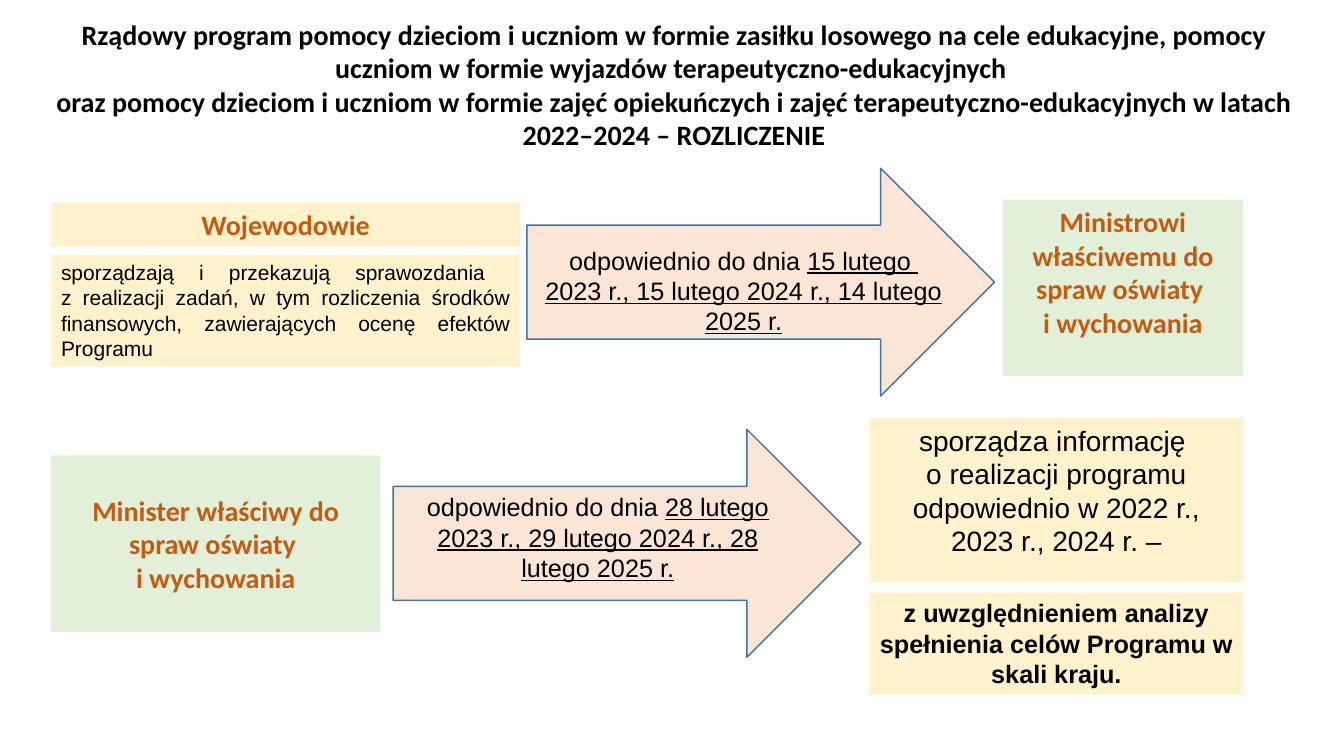
from dataclasses import dataclass

from pptx import Presentation
from pptx.dml.color import RGBColor
from pptx.enum.shapes import MSO_SHAPE as Shape
from pptx.enum.text import MSO_ANCHOR as Anchor, PP_ALIGN as Align
from pptx.util import Inches, Pt

WIDTH, HEIGHT = Inches(13.33), Inches(7.5)
COLUMNS = ROWS = 100
LEFT, RIGHT = 3.8, 64.7
PANEL, RESULT = 34.9, 27.8


@dataclass(frozen=True)
class Theme:
    heading: str = "Calibri"
    body: str = "Arial"
    black: str = "000000"
    orange: str = "C55A11"
    cream: str = "FFF2CC"
    green: str = "E2F0D9"
    peach: str = "FBE5D6"
    outline: str = "43739E"
    large: int = 20
    medium: int = 18
    small: int = 15


@dataclass(frozen=True)
class Style:
    font: str
    size: int
    color: str
    bold: bool = False
    underline: bool = False


THEME = Theme()
TITLE = Style(THEME.heading, THEME.large, THEME.black, bold=True)
ACTOR = Style(THEME.heading, THEME.large, THEME.orange, bold=True)
RESULT_TEXT = Style(THEME.body, THEME.large, THEME.black)
DUTY = Style(THEME.body, THEME.small, THEME.black)
DATE = Style(THEME.body, THEME.medium, THEME.black)
DEADLINE = Style(THEME.body, THEME.medium, THEME.black, underline=True)
EMPHASIS = Style(THEME.body, THEME.medium, THEME.black, bold=True)


def place(column, row, columns, rows):
    return (int(WIDTH * column / COLUMNS), int(HEIGHT * row / ROWS),
            int(WIDTH * columns / COLUMNS), int(HEIGHT * rows / ROWS))


def add_span(para, text, style):
    for index, line in enumerate(text.split("\n")):
        if index:
            para.add_line_break()
        span = para.add_run()
        span.text = line
        font = span.font
        font.name, font.size = style.font, Pt(style.size)
        font.bold, font.underline = style.bold, style.underline
        font.color.rgb = RGBColor.from_string(style.color)


def write(box, paragraphs, align=Align.CENTER, anchor=Anchor.TOP):
    frame = box.text_frame
    frame.word_wrap = True
    frame.vertical_anchor = anchor
    for index, spans in enumerate(paragraphs):
        para = frame.add_paragraph() if index else frame.paragraphs[0]
        para.alignment = align
        for text, style in spans:
            add_span(para, text, style)


def add_text(page, area, paragraphs, **layout):
    write(page.shapes.add_textbox(*place(*area)), paragraphs, **layout)


def add_filled(page, kind, area, fill):
    box = page.shapes.add_shape(kind, *place(*area))
    box.shadow.inherit = False
    box.fill.solid()
    box.fill.fore_color.rgb = RGBColor.from_string(fill)
    box.line.fill.background()
    return box


def add_panel(page, area, fill, text, style, **layout):
    box = add_filled(page, Shape.RECTANGLE, area, fill)
    write(box, [[(text, style)]], **layout)


def add_arrow(page, column, row):
    arrow = add_filled(page, Shape.RIGHT_ARROW, (column, row, 34.8, 30.15), THEME.peach)
    arrow.line.color.rgb = RGBColor.from_string(THEME.outline)
    arrow.line.width = Pt(1)


def add_reporting(page):
    add_panel(page, (LEFT, 26.8, PANEL, 5.85), THEME.cream, "Wojewodowie", ACTOR)
    add_panel(page, (LEFT, 33.7, PANEL, 14.8), THEME.cream,
              "sporządzają i przekazują sprawozdania \nz realizacji zadań, w tym "
              "rozliczenia środków finansowych, zawierających ocenę efektów Programu",
              DUTY, align=Align.JUSTIFY)
    add_arrow(page, 39.2, 22.25)
    add_text(page, (39.2, 27.2, 32.25, 22.4), [
        [("odpowiednio do dnia ", DATE), ("15 lutego ", DEADLINE)],
        [("2023 r., 15 lutego 2024 r., 14 lutego 2025 r.", DEADLINE)],
    ], anchor=Anchor.MIDDLE)
    add_panel(page, (74.6, 26.4, 17.9, 23.35), THEME.green,
              "Ministrowi właściwemu do spraw oświaty \ni wychowania", ACTOR)


def add_summary(page):
    add_panel(page, (LEFT, 60.25, 24.5, 23.35), THEME.green,
              "Minister właściwy do spraw oświaty \ni wychowania", ACTOR,
              anchor=Anchor.MIDDLE)
    add_arrow(page, 29.25, 56.8)
    add_text(page, (29.25, 64.4, 30.45, 13.5), [
        [("odpowiednio do dnia ", DATE),
         ("28 lutego 2023 r., 29 lutego 2024 r., 28 lutego 2025 r.", DEADLINE)],
    ])
    add_panel(page, (RIGHT, 55.3, RESULT, 21.75), THEME.cream,
              "sporządza informację \no realizacji programu odpowiednio w 2022 r., "
              "2023 r., 2024 r. –", RESULT_TEXT)
    add_panel(page, (RIGHT, 78.4, RESULT, 13.5), THEME.cream,
              "z uwzględnieniem analizy spełnienia celów Programu w skali kraju.",
              EMPHASIS)


def main():
    deck = Presentation()
    deck.slide_width, deck.slide_height = WIDTH, HEIGHT
    page = deck.slides.add_slide(deck.slide_layouts[6])
    add_text(page, (2.55, 1.6, 95.2, 19.35), [
        [("Rządowy program pomocy dzieciom i uczniom w formie zasiłku losowego na cele "
          "edukacyjne, pomocy uczniom w formie wyjazdów terapeutyczno-edukacyjnych ", TITLE)],
        [("oraz pomocy dzieciom i uczniom w formie zajęć opiekuńczych i zajęć "
          "terapeutyczno-edukacyjnych w latach 2022–2024 – ROZLICZENIE", TITLE)],
    ])
    add_reporting(page)
    add_summary(page)
    deck.save("out.pptx")


if __name__ == "__main__":
    main()
